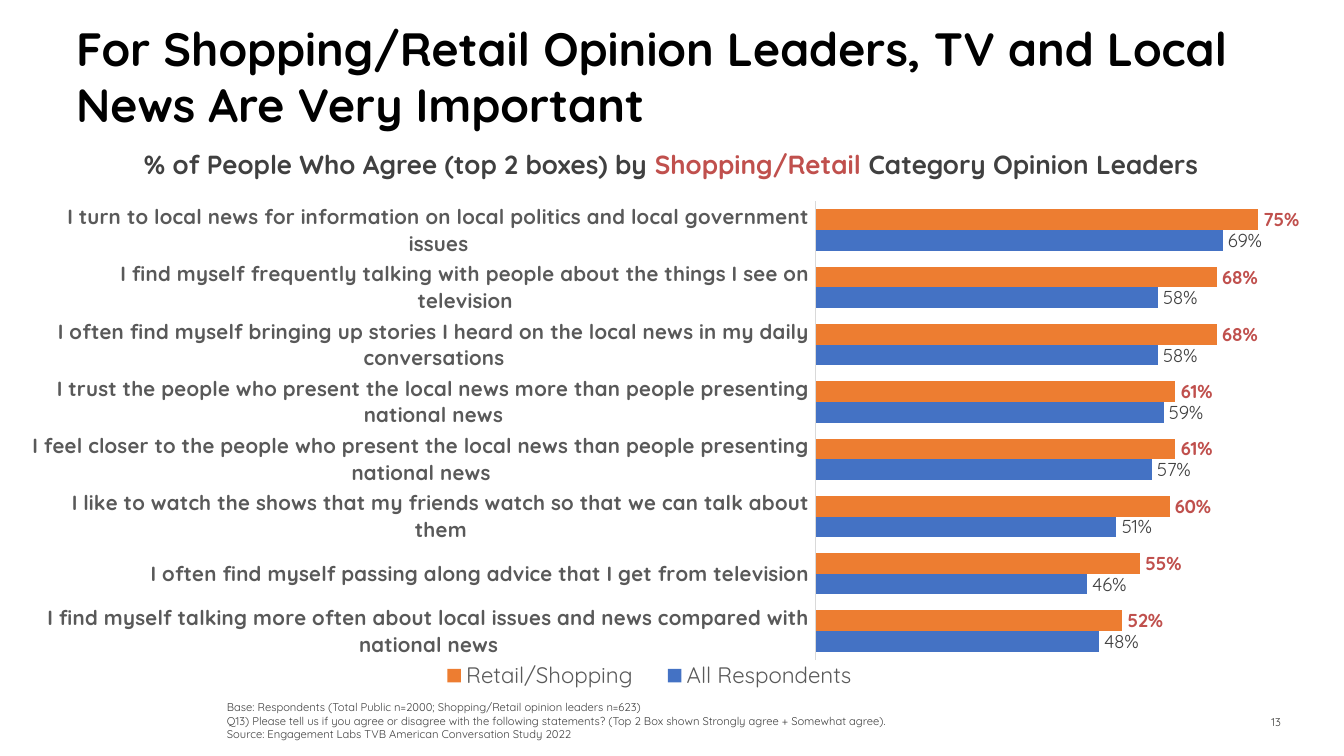
from lxml import etree
from pptx import Presentation
from pptx.chart.data import CategoryChartData
from pptx.dml.color import RGBColor
from pptx.enum.chart import XL_CHART_TYPE, XL_LABEL_POSITION, XL_LEGEND_POSITION, XL_TICK_MARK
from pptx.enum.text import MSO_ANCHOR, PP_ALIGN
from pptx.oxml.ns import qn
from pptx.util import Cm, Pt

BAR = XL_CHART_TYPE.BAR_CLUSTERED
OUTSIDE_END = XL_LABEL_POSITION.OUTSIDE_END
LEGEND_BOTTOM = XL_LEGEND_POSITION.BOTTOM
NO_TICK = XL_TICK_MARK.NONE
TOP, MIDDLE, BOTTOM = MSO_ANCHOR.TOP, MSO_ANCHOR.MIDDLE, MSO_ANCHOR.BOTTOM
LEFT, CENTER, RIGHT = PP_ALIGN.LEFT, PP_ALIGN.CENTER, PP_ALIGN.RIGHT

FONT = "Quicksand"
DARK, GREY, RED = "404040", "595959", "C0504D"

# Content
TITLE = "For Shopping/Retail Opinion Leaders, TV and Local News Are Very Important"
SUBTITLE = [
    ("% of People Who Agree (top 2 boxes) by ", DARK),
    ("Shopping/Retail ", RED),
    ("Category Opinion Leaders", DARK),
]
NOTES = [
    "Base: Respondents (Total Public n=2000; Shopping/Retail opinion leaders n=623)",
    "Q13) Please tell us if you agree or disagree with the following statements? "
    "(Top 2 Box shown Strongly agree + Somewhat agree).",
    "Source: Engagement Labs TVB American Conversation Study 2022",
]
PAGE_NUMBER = "13"

# Statement, all respondents, retail/shopping leaders; bottom bar first
ANSWERS = [
    ("I find myself talking more often about local issues and news compared with national news", 0.48, 0.52),
    ("I often find myself passing along advice that I get from television", 0.46, 0.55),
    ("I like to watch the shows that my friends watch so that we can talk about them", 0.51, 0.60),
    ("I feel closer to the people who present the local news than people presenting national news", 0.57, 0.61),
    ("I trust the people who present the local news more than people presenting national news", 0.59, 0.61),
    ("I often find myself bringing up stories I heard on the local news in my daily conversations", 0.58, 0.68),
    ("I find myself frequently talking with people about the things I see on television", 0.58, 0.68),
    ("I turn to local news for information on local politics and local government issues", 0.69, 0.75),
]
# Name, bar colour, label colour, bold labels
SERIES = [
    ("All Respondents", "4472C4", DARK, False),
    ("Retail/Shopping", "ED7D31", RED, True),
]


def rgb(value):
    return RGBColor.from_string(value)


def style(font, size, color, bold=False):
    font.name, font.size, font.bold = FONT, Pt(size), bold
    font.color.rgb = rgb(color)


def add_text(page, paragraphs, left, top, width, height, size, color=DARK,
             bold=False, align=LEFT, anchor=TOP, wrap=True, inset_top=0.13):
    """Each paragraph is a string or a list of (text, colour) spans."""
    box = page.shapes.add_textbox(Cm(left), Cm(top), Cm(width), Cm(height))
    frame = box.text_frame
    frame.word_wrap, frame.vertical_anchor = wrap, anchor
    frame.margin_top = Cm(inset_top)
    for index, content in enumerate(paragraphs):
        para = frame.add_paragraph() if index else frame.paragraphs[0]
        para.alignment = align
        spans = [(content, color)] if isinstance(content, str) else content
        for text, span_color in spans:
            span = para.add_run()
            span.text = text
            style(span.font, size, span_color, bold)


def place(parent, after, x, y, w, h, inner=False):
    """Fix a chart part at fractions of the chart area."""
    for old in parent.findall(qn("c:layout")):
        parent.remove(old)
    layout = etree.Element(qn("c:layout"))
    manual = etree.SubElement(layout, qn("c:manualLayout"))
    settings = [("layoutTarget", "inner")] if inner else []
    settings += [("xMode", "edge"), ("yMode", "edge"),
                 ("x", x), ("y", y), ("w", w), ("h", h)]
    for tag, value in settings:
        etree.SubElement(manual, qn("c:" + tag)).set("val", str(value))
    if after is None:
        parent.insert(0, layout)
    else:
        after.addnext(layout)


def add_bars(page, left, top, width, height):
    data = CategoryChartData(number_format="0%")
    data.categories = [answer[0] for answer in ANSWERS]
    for column, (name, *_) in enumerate(SERIES, start=1):
        data.add_series(name, [answer[column] for answer in ANSWERS])
    chart = page.shapes.add_chart(
        BAR, Cm(left), Cm(top), Cm(width), Cm(height), data).chart
    chart.has_title = False
    style(chart.font, 10, "000000")

    # Bars and their labels
    plot = chart.plots[0]
    plot.gap_width, plot.overlap, plot.vary_by_categories = 78, 0, False
    for series, (_, fill, label_color, bold) in zip(plot.series, SERIES):
        series.format.fill.solid()
        series.format.fill.fore_color.rgb = rgb(fill)
        labels = series.data_labels
        labels.show_value, labels.position = True, OUTSIDE_END
        labels.number_format, labels.number_format_is_linked = "0%", False
        style(labels.font, 10, label_color, bold)

    # Axes
    statements, shares = chart.category_axis, chart.value_axis
    statements.major_tick_mark = statements.minor_tick_mark = NO_TICK
    style(statements.tick_labels.font, 11, GREY, True)
    statements.format.line.color.rgb = rgb("D9D9D9")
    statements.format.line.width = Pt(0.75)
    shares.minimum_scale, shares.maximum_scale = 0, 0.8
    shares.has_major_gridlines = shares.visible = False

    # Legend and plot area
    chart.has_legend = True
    legend = chart.legend
    legend.position, legend.include_in_layout = LEGEND_BOTTOM, False
    style(legend.font, 12, GREY)
    legend_xml = legend._element
    place(legend_xml, legend_xml.find(qn("c:legendPos")), 0.3, 0.88, 0.36, 0.08)
    plot_area = chart._chartSpace.find(".//" + qn("c:plotArea"))
    place(plot_area, None, 0.61, 0.02, 0.37, 0.87, inner=True)


deck = Presentation()
deck.slide_width, deck.slide_height = Cm(25.4), Cm(14.29)
page = deck.slides.add_slide(deck.slide_layouts[6])

add_text(page, [PAGE_NUMBER], 22.96, 13.26, 1.5, 0.76, 6, color="3C3C3A",
         align=RIGHT, anchor=MIDDLE)
add_text(page, [TITLE], 1.19, 0.38, 22.91, 2.01, 25, color="000000",
         bold=True, inset_top=0)
add_text(page, NOTES, 4.04, 13.11, 20.68, 1.02, 6, anchor=BOTTOM)
add_text(page, [SUBTITLE], 2.31, 2.67, 20.75, 0.86, 14, bold=True,
         align=CENTER, wrap=False)
add_bars(page, 0.61, 3.61, 24.21, 9.96)

deck.save("out.pptx")
